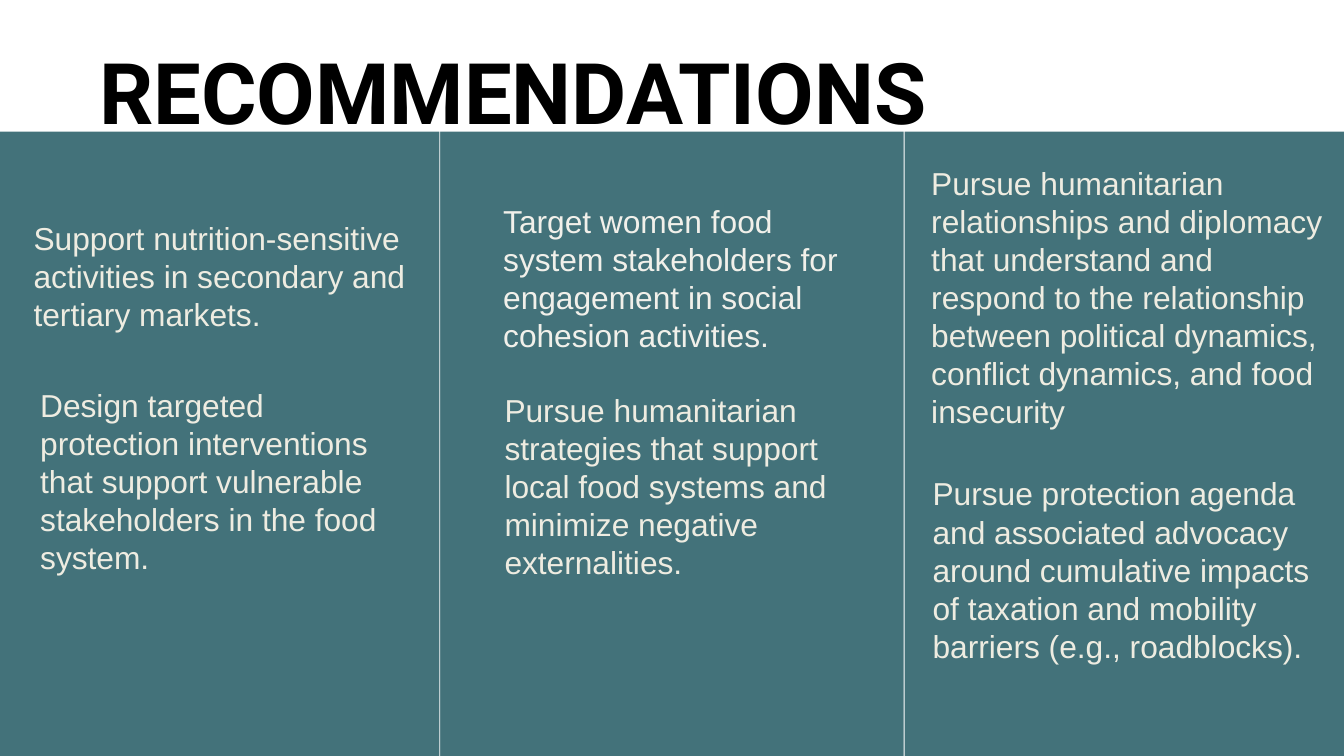
from pptx import Presentation
from pptx.dml.color import RGBColor
from pptx.enum import shapes, text
from pptx.util import Cm, Pt

TEAL = RGBColor(0x43, 0x72, 0x7A)
WHITE = RGBColor(0xFF, 0xFF, 0xFF)
BLACK = RGBColor(0x00, 0x00, 0x00)
CREAM = RGBColor(0xEE, 0xEC, 0xE1)
IVORY = RGBColor(0xF1, 0xF0, 0xEA)

presentation = Presentation()
presentation.slide_width = Cm(50.8)
presentation.slide_height = Cm(28.58)
slide = presentation.slides.add_slide(presentation.slide_layouts[5])
slide.background.fill.solid()
slide.background.fill.fore_color.rgb = TEAL


def format_text(shape, wording, font_name, size, color, spacing, inset, bold=False):
    frame = shape.text_frame
    frame.word_wrap = True
    frame.auto_size = text.MSO_AUTO_SIZE.NONE
    frame.vertical_anchor = text.MSO_ANCHOR.TOP
    frame.margin_left = frame.margin_right = inset
    frame.margin_top = frame.margin_bottom = inset
    paragraph = frame.paragraphs[0]
    paragraph.alignment = text.PP_ALIGN.LEFT
    paragraph.line_spacing = spacing
    run = paragraph.add_run()
    run.text = wording
    run.font.name = font_name
    run.font.size = Pt(size)
    run.font.bold = bold
    run.font.color.rgb = color


# Column dividers and header band: left, width, height
for left, width, height in [(16.61, 0.03, 28.58), (34.16, 0.03, 28.58), (0, 50.8, 4.98)]:
    shape = slide.shapes.add_shape(
        shapes.MSO_SHAPE.RECTANGLE, Cm(left), 0, Cm(width), Cm(height))
    shape.shadow.inherit = False
    shape.fill.solid()
    shape.fill.fore_color.rgb = WHITE
    shape.line.fill.background()

# Title, brought in front of the header band
title = slide.shapes.title
title.left, title.top, title.width, title.height = Cm(3.76), Cm(0.71), Cm(47.04), Cm(3.89)
format_text(title, "RECOMMENDATIONS", "Roboto", 91, BLACK, 1.2, 0, bold=True)
title.element.getparent().append(title.element)

# Recommendations, column by column: left, top, width, height, colour, wording
recommendations = [
    (1.02, 8.03, 14.73, 4.88, CREAM,
     "Support nutrition-sensitive activities in secondary and tertiary markets."),
    (1.27, 14.33, 13.61, 7.77, CREAM,
     "Design targeted protection interventions that support vulnerable "
     "stakeholders in the food system."),
    (18.77, 7.37, 14.07, 6.32, IVORY,
     "Target women food system stakeholders for engagement in social "
     "cohesion activities."),
    (18.82, 14.53, 14.07, 7.77, CREAM,
     "Pursue humanitarian strategies that support local food systems and "
     "minimize negative externalities."),
    (34.95, 5.94, 15.39, 10.69, CREAM,
     "Pursue humanitarian relationships and diplomacy that understand and "
     "respond to the relationship between political dynamics, conflict "
     "dynamics, and food insecurity"),
    (35, 17.68, 15.39, 7.77, CREAM,
     "Pursue protection agenda and associated advocacy around cumulative "
     "impacts of taxation and mobility barriers (e.g., roadblocks)."),
]
for left, top, width, height, color, wording in recommendations:
    box = slide.shapes.add_textbox(Cm(left), Cm(top), Cm(width), Cm(height))
    format_text(box, wording, "Arial", 34, color, 1.0, Cm(0.25))

presentation.save("out.pptx")
